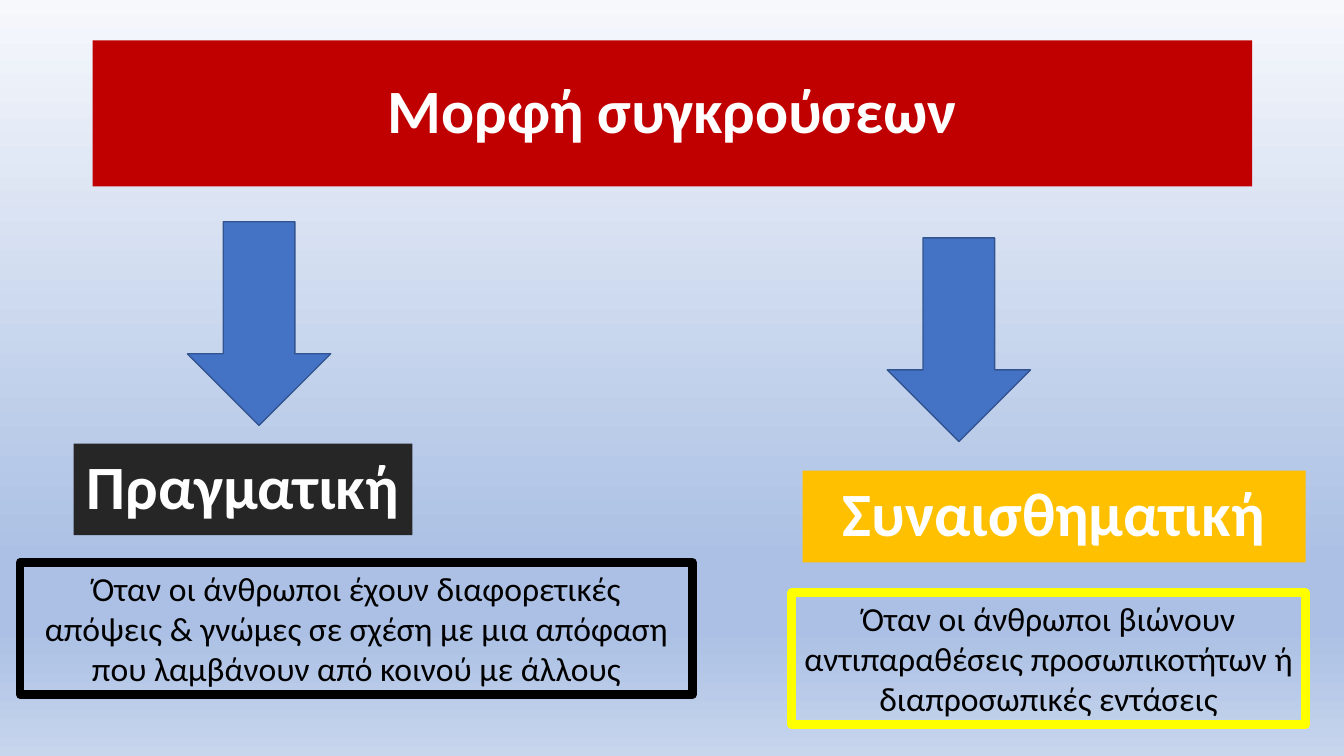
from copy import deepcopy
from dataclasses import dataclass

from pptx import Presentation
from pptx.dml.color import RGBColor as Rgb
from pptx.enum.shapes import MSO_SHAPE as Form
from pptx.enum.text import MSO_ANCHOR as Anchor, MSO_AUTO_SIZE as Fit, PP_ALIGN as Align
from pptx.util import Inches, Pt


@dataclass(frozen=True)
class Theme:
    font: str = "Calibri"
    head: int = 44
    body: int = 24
    white: str = "FFFFFF"
    black: str = "000000"
    red: str = "C00000"
    dark: str = "262626"
    gold: str = "FFC000"
    yellow: str = "FFFF00"
    blue: str = "4472C4"
    edge: str = "325491"
    sky: tuple = ((0, "F6F8FC"), (0.74, "ABC0E4"), (0.83, "ABC0E4"), (1, "C7D5ED"))


class Board:
    def __init__(self, slide, theme):
        self.slide = slide
        self.theme = theme

    def back(self):
        fill = self.slide.background.fill
        fill.gradient()
        fill.gradient_angle = 270
        stops = self.slide.element.xpath(".//a:gsLst")[0]
        while len(stops) < len(self.theme.sky):
            stops.append(deepcopy(stops[0]))
        for stop, (place, color) in zip(fill.gradient_stops, self.theme.sky):
            stop.position = place
            stop.color.rgb = Rgb.from_string(color)

    def form(self, kind, area, fill=None, line=None, width=1):
        shape = self.slide.shapes.add_shape(kind, *map(Inches, area))
        shape.shadow.inherit = False
        if fill:
            shape.fill.solid()
            shape.fill.fore_color.rgb = Rgb.from_string(fill)
        else:
            shape.fill.background()
        if line:
            shape.line.color.rgb = Rgb.from_string(line)
            shape.line.width = Pt(width)
        else:
            shape.line.fill.background()
        return shape

    def words(self, shape, text, size, color, bold=False):
        frame = shape.text_frame
        frame.text = text
        frame.word_wrap = True
        para = frame.paragraphs[0]
        para.alignment = Align.CENTER
        font = para.runs[0].font
        font.name = self.theme.font
        font.size = Pt(size)
        font.bold = bold
        font.color.rgb = Rgb.from_string(color)
        return frame

    def label(self, text, area, fill):
        shape = self.form(Form.RECTANGLE, area, fill)
        frame = self.words(shape, text, self.theme.head, self.theme.white, True)
        frame.vertical_anchor = Anchor.MIDDLE
        frame.paragraphs[0].line_spacing = 0.9

    def note(self, text, area, line):
        shape = self.form(Form.RECTANGLE, area, line=line, width=6)
        frame = self.words(shape, text, self.theme.body, self.theme.black)
        frame.vertical_anchor = Anchor.TOP
        frame.auto_size = Fit.SHAPE_TO_FIT_TEXT

    def arrow(self, left, top):
        self.form(Form.DOWN_ARROW, (left, top, 1.42, 2.02),
                  self.theme.blue, self.theme.edge)


def main():
    deck = Presentation()
    deck.slide_width = Inches(13.33)
    deck.slide_height = Inches(7.5)
    theme = Theme()
    board = Board(deck.slides.add_slide(deck.slide_layouts[6]), theme)

    # Background and title
    board.back()
    board.label("Μορφή συγκρούσεων", (0.92, 0.4, 11.5, 1.45), theme.red)

    # Arrows to the two forms
    board.arrow(8.8, 2.36)
    board.arrow(1.86, 2.2)

    # Names of the forms
    board.label("Πραγματική", (0.73, 4.4, 3.36, 0.91), theme.dark)
    board.label("Συναισθηματική", (7.96, 4.67, 4.99, 0.91), theme.gold)

    # What each form means
    board.note("Όταν οι άνθρωποι έχουν διαφορετικές απόψεις & γνώμες σε σχέση "
               "με μια απόφαση που λαμβάνουν από κοινού με άλλους",
               (0.2, 5.58, 6.67, 1.31), theme.black)
    board.note("Όταν οι άνθρωποι βιώνουν αντιπαραθέσεις προσωπικοτήτων ή "
               "διαπροσωπικές εντάσεις",
               (7.85, 5.88, 5.1, 1.31), theme.yellow)

    deck.save("out.pptx")


if __name__ == "__main__":
    main()
